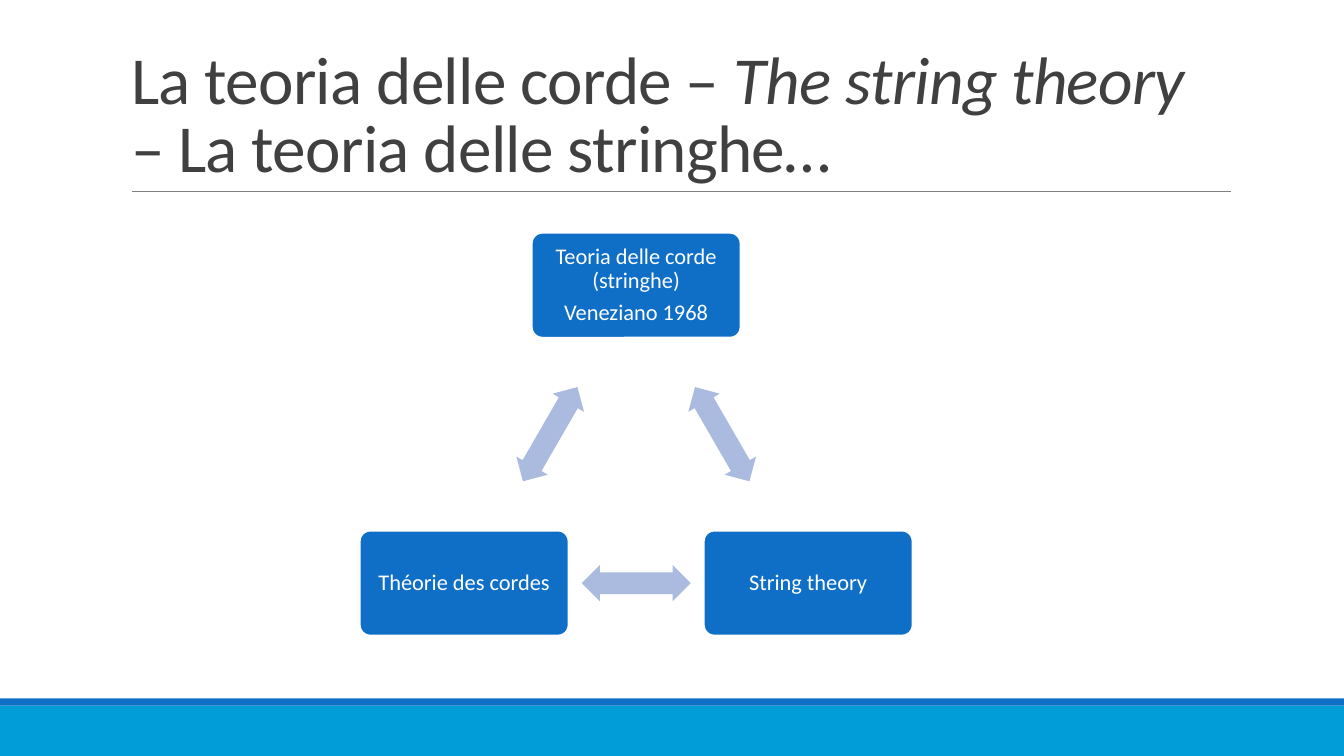
from math import cos, radians, sin

from lxml import etree
from pptx import Presentation
from pptx.dml.color import RGBColor
from pptx.enum.shapes import MSO_CONNECTOR, MSO_SHAPE as Shape
from pptx.enum.text import MSO_ANCHOR as Anchor, MSO_AUTO_SIZE as AutoSize, PP_ALIGN as Align
from pptx.oxml.ns import qn
from pptx.util import Inches, Pt

WHITE = RGBColor(0xFF, 0xFF, 0xFF)
BLUE = RGBColor(0x0F, 0x6F, 0xC6)
CYAN = RGBColor(0x00, 0x9D, 0xD9)
LILAC = RGBColor(0xAB, 0xBB, 0xDF)
GRAY = RGBColor(0x80, 0x80, 0x80)
DARK = RGBColor(0x40, 0x40, 0x40)

FONT = "Calibri"
CENTER_X, CENTER_Y, RADIUS = 6.31, 4.8, 1.97
BOX_W, BOX_H = 2.07, 1.04
ARROW_W, ARROW_H = 1.08, 0.36
TITLE_RUNS = [
    ("La teoria delle corde – ", False),
    ("The string theory", True),
    (" – La teoria delle stringhe…", False),
]
THEORIES = [
    ["Teoria delle corde (stringhe)", "Veneziano 1968"],
    ["String theory"],
    ["Théorie des cordes"],
]


def add_run(p, text, size, color, italic=False):
    """Append one formatted run to a paragraph and return it."""
    r = p.add_run()
    r.text = text
    r.font.name = FONT
    r.font.size = Pt(size)
    r.font.italic = italic
    r.font.color.rgb = color
    return r


def add_filled(s, kind, left, top, width, height, fill):
    """Add a flat preset shape without outline."""
    sp = s.shapes.add_shape(kind, Inches(left), Inches(top), Inches(width), Inches(height))
    sp.shadow.inherit = False
    sp.fill.solid()
    sp.fill.fore_color.rgb = fill
    sp.line.fill.background()
    return sp


def add_rule(s, x1, x2, y):
    """Add the thin horizontal rule under the title."""
    line = s.shapes.add_connector(
        MSO_CONNECTOR.STRAIGHT, Inches(x1), Inches(y), Inches(x2), Inches(y))
    line.line.color.rgb = GRAY
    line.line.width = Pt(0.5)
    etree.SubElement(line._element.spPr, qn("a:effectLst"))


def set_title(s):
    """Place the title placeholder and fill it run by run."""
    title = s.shapes.title
    title.left, title.top = Inches(1.2), Inches(0.31)
    title.width, title.height = Inches(11), Inches(1.59)
    tf = title.text_frame
    tf.auto_size = AutoSize.NONE
    tf.word_wrap = True
    tf.vertical_anchor = Anchor.BOTTOM
    p = tf.paragraphs[0]
    p.alignment = Align.LEFT
    p.line_spacing = 0.85
    for text, italic in TITLE_RUNS:
        r = add_run(p, text, 48, DARK, italic)
        r._r.get_or_add_rPr().set("spc", "-50")


def add_theory(s, x, y, lines):
    """Add a rounded box centred on a point, one paragraph per line."""
    sp = add_filled(s, Shape.ROUNDED_RECTANGLE, x - BOX_W / 2, y - BOX_H / 2, BOX_W, BOX_H, BLUE)
    sp.adjustments[0] = 0.1
    sp.line.color.rgb = WHITE
    sp.line.width = Pt(1.25)
    tf = sp.text_frame
    tf.word_wrap = True
    tf.vertical_anchor = Anchor.MIDDLE
    tf.margin_left = tf.margin_right = tf.margin_top = tf.margin_bottom = Inches(0.07)
    for i, text in enumerate(lines):
        p = tf.add_paragraph() if i else tf.paragraphs[0]
        p.alignment = Align.CENTER
        p.line_spacing = 0.9
        p.space_after = Pt(5.6)
        add_run(p, text, 16, WHITE)


def add_arrow(s, start, end, rotation):
    """Add a double arrow halfway between two box centres."""
    x, y = ((a + b) / 2 for a, b in zip(start, end))
    sp = add_filled(s, Shape.LEFT_RIGHT_ARROW, x - ARROW_W / 2, y - ARROW_H / 2,
                    ARROW_W, ARROW_H, LILAC)
    sp.adjustments[0] = 0.6
    sp.adjustments[1] = 0.5
    sp.rotation = rotation


def add_cycle(s):
    """Draw the theories evenly round a circle with arrows between them."""
    step = 360 / len(THEORIES)
    angles = [radians(step * i - 90) for i in range(len(THEORIES))]
    centers = [(CENTER_X + RADIUS * cos(a), CENTER_Y + RADIUS * sin(a)) for a in angles]
    for i, (center, lines) in enumerate(zip(centers, THEORIES)):
        add_theory(s, *center, lines)
        add_arrow(s, center, centers[(i + 1) % len(centers)], step * (i + 0.5))


def main():
    """Build the slide and save it."""
    prs = Presentation()
    prs.slide_width, prs.slide_height = Inches(13.33), Inches(7.5)
    s = prs.slides.add_slide(prs.slide_layouts[5])
    s.background.fill.solid()
    s.background.fill.fore_color.rgb = WHITE
    add_filled(s, Shape.RECTANGLE, 0, 7, 13.33, 0.5, CYAN)
    add_filled(s, Shape.RECTANGLE, 0, 6.93, 13.33, 0.07, BLUE)
    add_rule(s, 1.31, 12.21, 1.9)
    set_title(s)
    add_cycle(s)
    prs.save("out.pptx")


if __name__ == "__main__":
    main()
